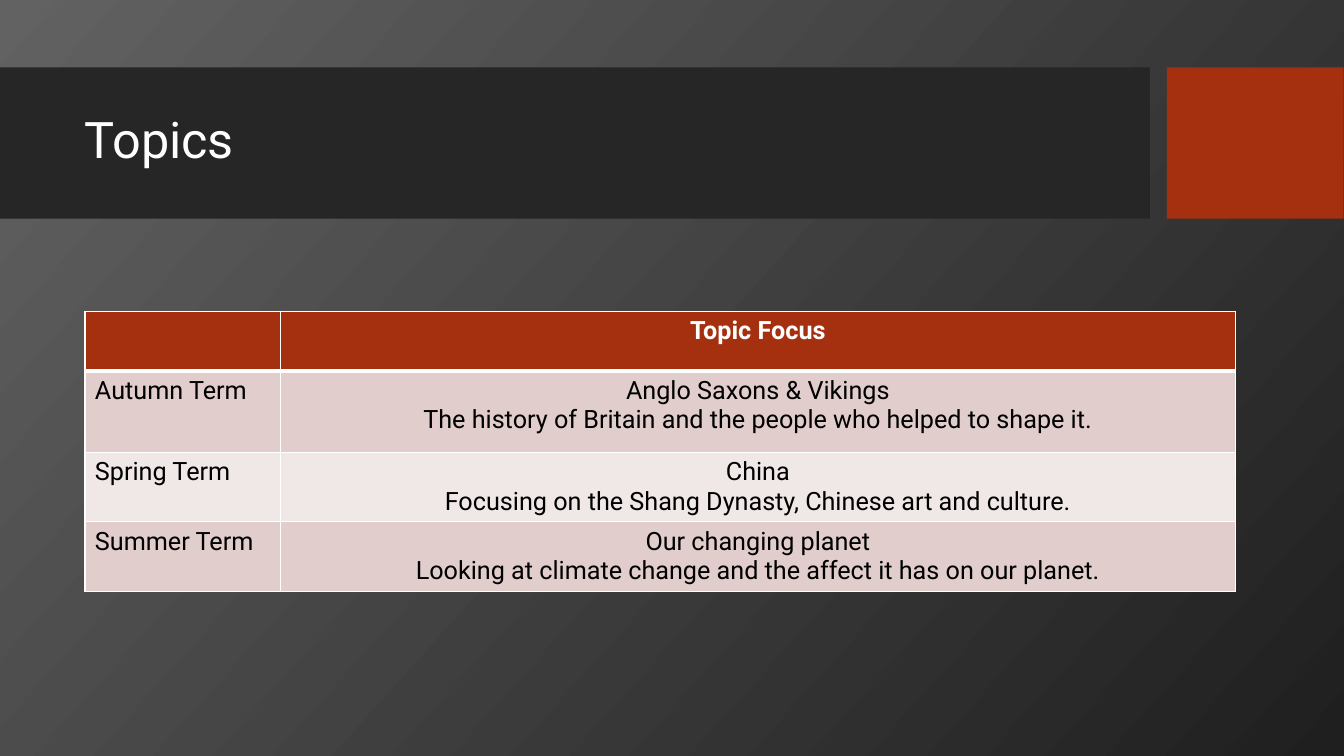
from dataclasses import dataclass

import pptx
import pptx.dml.color
import pptx.enum.shapes
import pptx.enum.text
import pptx.oxml
import pptx.oxml.ns
import pptx.presentation
import pptx.slide
import pptx.table
import pptx.text.text
import pptx.util

Cm = pptx.util.Cm
Pt = pptx.util.Pt
Align = pptx.enum.text.PP_ALIGN


@dataclass(frozen=True)
class Theme:
    font: str = "Roboto"
    title_size: int = 36
    table_size: int = 18
    light: str = "FFFFFF"
    dark: str = "000000"
    accent: str = "A5300F"
    bar: str = "262626"
    bands: tuple[str, str] = ("E1CDCC", "F0E8E7")
    backdrop: tuple[str, str] = ("626262", "1F1F1F")
    thin_border: int = 1
    thick_border: int = 3


@dataclass(frozen=True)
class Bar:
    left: float
    width: float
    color: str


@dataclass(frozen=True)
class TopicRow:
    term: str
    focus: tuple[str, ...]
    height: float


THEME = Theme()
BAR_TOP, BAR_HEIGHT = 1.7, 3.81
BARS = (Bar(0, 28.98, THEME.bar), Bar(29.41, 4.45, THEME.accent))
COLUMN_WIDTHS = (4.92, 24.08)
ROWS = (
    TopicRow("", ("Topic Focus",), 1.5),
    TopicRow("Autumn Term", (
        "Anglo Saxons & Vikings",
        "The history of Britain and the people who helped to shape it.",
    ), 2.05),
    TopicRow("Spring Term", (
        "China",
        "Focusing on the Shang Dynasty, Chinese art and culture.",
    ), 1.75),
    TopicRow("Summer Term", (
        "Our changing planet",
        "Looking at climate change and the affect it has on our planet.",
    ), 1.75),
)


def rgb(color: str) -> pptx.dml.color.RGBColor:
    return pptx.dml.color.RGBColor.from_string(color)


def add_span(para: pptx.text.text._Paragraph, text: str, size: int,
             color: str, bold: bool = False) -> None:
    span = para.add_run()
    span.text = text
    span.font.name = THEME.font
    span.font.size = Pt(size)
    span.font.bold = bold
    span.font.color.rgb = rgb(color)


def paint_background(page: pptx.slide.Slide) -> None:
    fill = page.background.fill
    fill.gradient()
    fill.gradient_angle = 360 - 42
    for stop, color in zip(fill.gradient_stops, THEME.backdrop):
        stop.color.rgb = rgb(color)


def add_title(page: pptx.slide.Slide, text: str) -> None:
    """Fill the title placeholder and lay the bars behind it."""
    title = page.shapes.title
    title.left, title.top = Cm(1.88), Cm(2.08)
    title.width, title.height = Cm(26.69), Cm(3)
    frame = title.text_frame
    frame.word_wrap = True
    frame.auto_size = pptx.enum.text.MSO_AUTO_SIZE.NONE
    frame.vertical_anchor = pptx.enum.text.MSO_ANCHOR.MIDDLE
    para = frame.paragraphs[0]
    para.alignment = Align.LEFT
    para.line_spacing = 0.9
    add_span(para, text, THEME.title_size, THEME.light)
    for bar in BARS:
        box = page.shapes.add_shape(
            pptx.enum.shapes.MSO_SHAPE.RECTANGLE,
            Cm(bar.left), Cm(BAR_TOP), Cm(bar.width), Cm(BAR_HEIGHT))
        box.shadow.inherit = False
        box.fill.solid()
        box.fill.fore_color.rgb = rgb(bar.color)
        box.line.fill.background()
        title.element.addprevious(box.element)


def set_borders(cell: pptx.table._Cell, top: int, bottom: int) -> None:
    widths = {"L": THEME.thin_border, "R": THEME.thin_border,
              "T": top, "B": bottom}
    properties = cell._tc.get_or_add_tcPr()
    for position, (side, width) in enumerate(widths.items()):
        properties.insert(position, pptx.oxml.parse_xml(
            f'<a:ln{side} {pptx.oxml.ns.nsdecls("a")} w="{Pt(width)}">'
            f'<a:solidFill><a:srgbClr val="{THEME.light}"/></a:solidFill>'
            f'</a:ln{side}>'))


def fill_cell(cell: pptx.table._Cell, lines: tuple[str, ...],
              alignment: Align, row_index: int) -> None:
    header = row_index == 0
    cell.fill.solid()
    cell.fill.fore_color.rgb = rgb(
        THEME.accent if header else THEME.bands[(row_index - 1) % 2])
    set_borders(
        cell,
        top=THEME.thick_border if row_index == 1 else THEME.thin_border,
        bottom=THEME.thick_border if header else THEME.thin_border)
    frame = cell.text_frame
    for index, line in enumerate(lines):
        para = frame.add_paragraph() if index else frame.paragraphs[0]
        para.alignment = alignment
        if line:
            add_span(para, line, THEME.table_size,
                     THEME.light if header else THEME.dark, bold=header)


def add_topic_table(page: pptx.slide.Slide) -> None:
    table = page.shapes.add_table(
        len(ROWS), len(COLUMN_WIDTHS), Cm(2.14), Cm(7.85),
        Cm(sum(COLUMN_WIDTHS)), Cm(sum(row.height for row in ROWS))).table
    for column, width in zip(table.columns, COLUMN_WIDTHS):
        column.width = Cm(width)
    for index, row in enumerate(ROWS):
        table.rows[index].height = Cm(row.height)
        fill_cell(table.cell(index, 0), (row.term,), Align.LEFT, index)
        fill_cell(table.cell(index, 1), row.focus, Align.CENTER, index)


def main() -> None:
    deck = pptx.Presentation()
    deck.slide_width, deck.slide_height = Cm(33.87), Cm(19.05)
    page = deck.slides.add_slide(deck.slide_layouts.get_by_name("Title Only"))
    paint_background(page)
    add_title(page, "Topics")
    add_topic_table(page)
    deck.save("out.pptx")


if __name__ == "__main__":
    main()
